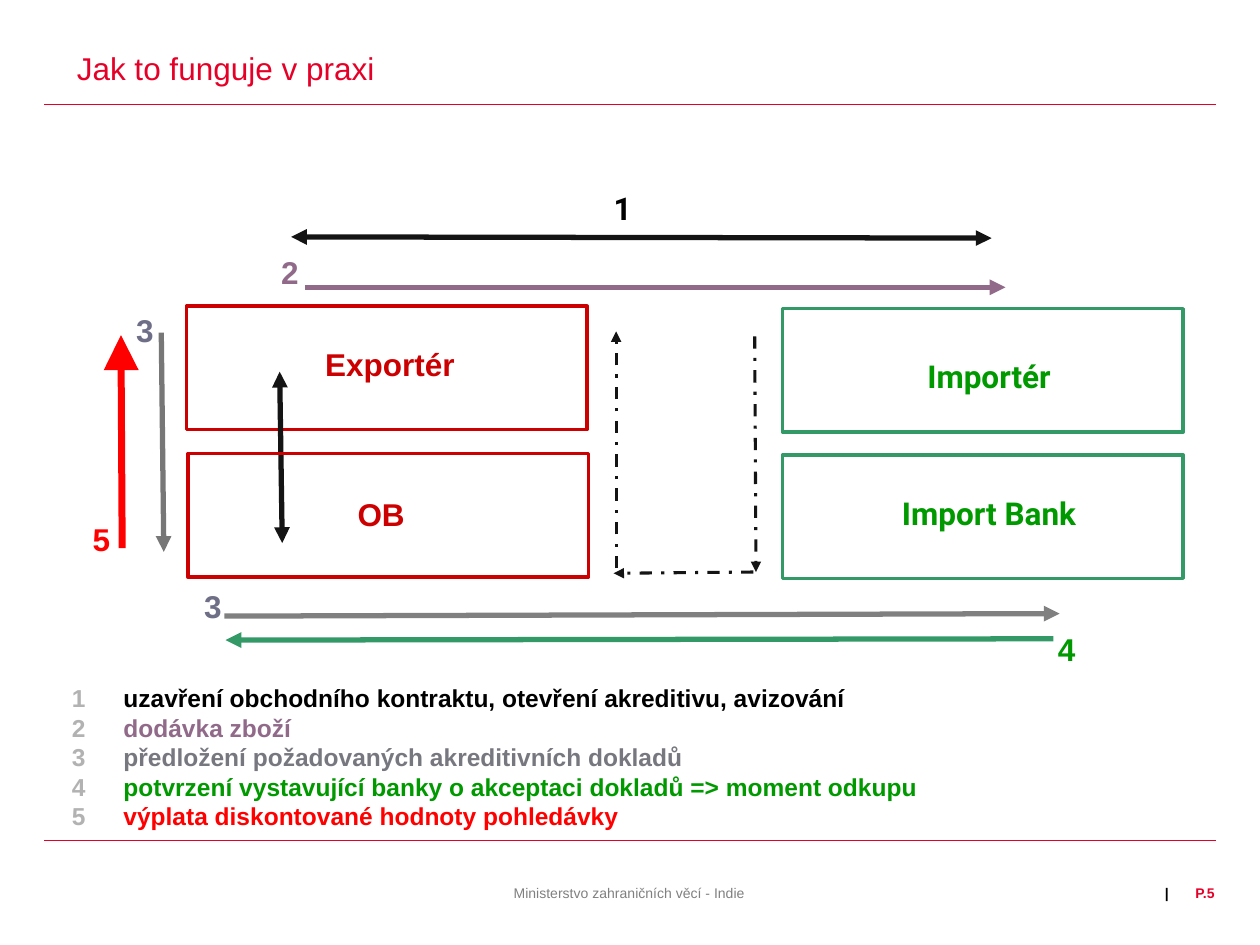
from lxml.etree import SubElement
from pptx import Presentation
from pptx.dml.color import RGBColor
from pptx.enum.dml import MSO_LINE
from pptx.enum.shapes import MSO_CONNECTOR, MSO_SHAPE
from pptx.enum.text import MSO_ANCHOR, MSO_AUTO_SIZE, PP_ALIGN
from pptx.oxml.ns import qn
from pptx.util import Inches, Pt

COLORS = {
    "brand": "E60028", "black": "000000", "ink": "141414", "plum": "916A8A",
    "slate": "6E6E87", "document": "77777F", "dark_gray": "777777",
    "gray": "808080", "number": "B2B2B2", "crimson": "CC0000", "red": "FF0000",
    "green": "009900", "sea_green": "339966",
}


def rgb(color):
    return RGBColor.from_string(COLORS[color])


class SlideBuilder:
    """Holds the slide and the text style shared by its elements."""

    font = "Arial"
    label_size = 18
    label_insets = (0.11, 0.06)

    def __init__(self, slide):
        self.slide = slide

    def format_run(self, run, color, size, bold, font=None):
        run.font.name = font or self.font
        run.font.size = Pt(size)
        run.font.bold = bold
        run.font.color.rgb = rgb(color)

    def frame(self, box, insets=(0, 0), wrap=True):
        frame = self.slide.shapes.add_textbox(*map(Inches, box)).text_frame
        frame.word_wrap = wrap
        frame.margin_left = frame.margin_right = Inches(insets[0])
        frame.margin_top = frame.margin_bottom = Inches(insets[1])
        return frame

    def text(self, words, box, color, size=8, bold=False, align=PP_ALIGN.LEFT,
             insets=(0, 0), wrap=True, font=None, spacing=None):
        frame = self.frame(box, insets, wrap)
        frame.text = words
        paragraph = frame.paragraphs[0]
        paragraph.alignment = align
        if spacing:
            paragraph.line_spacing = spacing
        self.format_run(paragraph.runs[0], color, size, bold, font)
        return frame

    def label(self, words, box, color, align=PP_ALIGN.CENTER, **style):
        """Bold diagram caption whose box grows with its text."""
        frame = self.text(words, box, color, self.label_size, True, align,
                          self.label_insets, **style)
        frame.auto_size = MSO_AUTO_SIZE.SHAPE_TO_FIT_TEXT

    def numbered_list(self, items, box, size):
        frame = self.frame(box, self.label_insets)
        frame.text = "\n".join(words for words, _ in items)
        for index, (paragraph, (_, color)) in enumerate(zip(frame.paragraphs, items)):
            properties = paragraph._p.get_or_add_pPr()
            properties.set("marL", str(Inches(0.41)))
            properties.set("indent", str(-Inches(0.41)))
            bullet_color = SubElement(properties, qn("a:buClr"))
            SubElement(bullet_color, qn("a:srgbClr"), val=COLORS["number"])
            SubElement(properties, qn("a:buFont"), typeface=self.font)
            SubElement(properties, qn("a:buAutoNum"), type="arabicPlain")
            paragraph.line_spacing = 0.95
            if index:
                paragraph.space_before = Pt(0.9)
            self.format_run(paragraph.runs[0], color, size, True)

    def party_box(self, left, top, color):
        box = self.slide.shapes.add_shape(
            MSO_SHAPE.RECTANGLE, *map(Inches, (left, top, 3.18, 0.98)))
        box.shadow.inherit = False
        box.fill.background()
        box.line.color.rgb = rgb(color)
        box.line.width = Pt(2)

    def line(self, start, end, color, width, ends=(), dash=None, head_size="med"):
        """Draw a line; ends names the tips with arrowheads, headEnd at start."""
        connector = self.slide.shapes.add_connector(
            MSO_CONNECTOR.STRAIGHT, *map(Inches, start + end))
        connector.line.color.rgb = rgb(color)
        connector.line.width = Pt(width)
        if dash:
            connector.line.dash_style = dash
        outline = connector.line._get_or_add_ln()
        for tip in ends:
            SubElement(outline, qn("a:" + tip), type="triangle",
                       w=head_size, len=head_size)
        SubElement(connector._element.spPr, qn("a:effectLst"))

    def arrow(self, start, end, color, width=3, **style):
        self.line(start, end, color, width, ("tailEnd",), **style)

    def double_arrow(self, start, end, color):
        self.line(start, end, color, 3, ("headEnd", "tailEnd"))


def main():
    presentation = Presentation()
    presentation.slide_width, presentation.slide_height = Inches(10), Inches(7.5)
    builder = SlideBuilder(presentation.slides.add_slide(presentation.slide_layouts[6]))

    for rule_y in (6.67, 0.83):
        builder.line((9.65, rule_y), (0.35, rule_y), "brand", 0.5)
    title = builder.text("Jak to funguje v praxi", (0.61, 0.28, 8.56, 0.55),
                         "brand", 18, spacing=0.9)
    title.vertical_anchor = MSO_ANCHOR.MIDDLE

    builder.numbered_list([
        ("uzavření obchodního kontraktu, otevření akreditivu, avizování", "black"),
        ("dodávka zboží", "plum"),
        ("předložení požadovaných akreditivních dokladů", "document"),
        ("potvrzení vystavující banky o akceptaci dokladů => moment odkupu", "green"),
        ("výplata diskontované hodnoty pohledávky", "red"),
    ], (0.46, 5.38, 9.38, 1.55), 14)

    # Exporter side
    builder.arrow((0.97, 4.35), (0.96, 2.66), "red", 4, head_size="lg")
    builder.arrow((1.28, 2.64), (1.3, 4.38), "dark_gray")
    builder.party_box(1.48, 2.43, "crimson")
    builder.label("Exportér", (1.83, 2.8, 2.53, 0.28), "crimson", spacing=0.55)
    builder.double_arrow((2.22, 2.95), (2.24, 4.31), "ink")
    builder.label("OB", (2.44, 3.87, 1.17, 0.41), "crimson")
    builder.party_box(1.49, 3.6, "crimson")

    # Importer side
    for name, box_top, label_top in (("Importér", 2.45, 2.77),
                                     ("Import Bank", 3.61, 3.86)):
        builder.party_box(6.21, box_top, "sea_green")
        builder.label(name, (6.68, label_top, 2.34, 0.41), "green", font="Roboto")

    # Flows between the two sides
    builder.double_arrow((2.31, 1.88), (7.87, 1.89), "ink")
    builder.arrow((2.42, 2.28), (7.98, 2.28), "plum")
    for start, end in (((4.89, 4.51), (4.89, 2.63)),
                       ((5.98, 4.54), (4.87, 4.55)),
                       ((5.99, 2.67), (6, 4.54))):
        builder.arrow(start, end, "ink", 1.75, dash=MSO_LINE.DASH_DOT)
    builder.arrow((1.78, 4.89), (8.41, 4.87), "gray")
    builder.arrow((8.36, 5.07), (1.79, 5.08), "sea_green")

    builder.label("1", (4.76, 1.44, 0.38, 0.41), "black", PP_ALIGN.LEFT, font="Roboto")
    for step, left, top, width, color in (
        ("2", 2.07, 1.95, 0.46, "plum"),
        ("3", 0.97, 2.41, 0.32, "slate"),
        ("3", 1.51, 4.6, 0.32, "slate"),
        ("4", 8.28, 4.94, 0.37, "green"),
        ("5", 0.6, 4.07, 0.41, "red"),
    ):
        builder.label(step, (left, top, width, 0.41), color)

    # Footer
    builder.text("Ministerstvo zahraničních věcí - Indie", (3.03, 7.02, 3.93, 0.48),
                 "gray", align=PP_ALIGN.CENTER)
    builder.text("|", (9.22, 7.02, 0.08, 0.48), "black", bold=True,
                 align=PP_ALIGN.CENTER, wrap=False)
    builder.text("P.5", (9.25, 7.02, 0.39, 0.48), "brand", bold=True,
                 align=PP_ALIGN.RIGHT)

    presentation.save("out.pptx")


if __name__ == "__main__":
    main()
